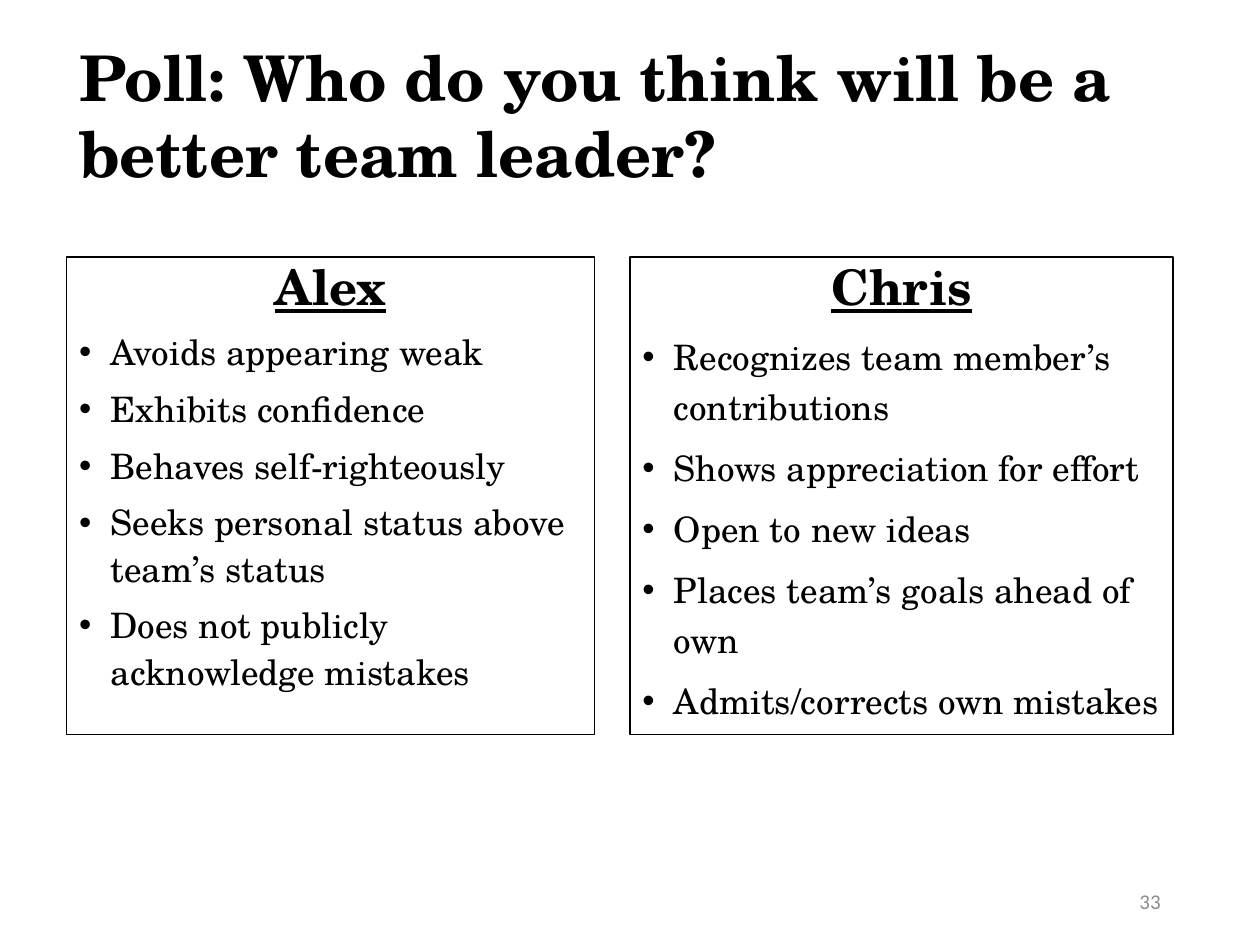
import pptx
import pptx.dml.color
import pptx.enum.shapes
import pptx.enum.text
import pptx.oxml.ns
import pptx.util
import lxml.etree

Inches = pptx.util.Inches
Pt = pptx.util.Pt
Align = pptx.enum.text.PP_ALIGN
Anchor = pptx.enum.text.MSO_ANCHOR


def color(value):
    return pptx.dml.color.RGBColor.from_string(value)


class PollSlide:
    serif = "TeX Gyre Schola"
    sans = "Calibri"
    ink = "000000"
    gray = "8C8C8C"

    def __init__(self, presentation):
        self.slide = presentation.slides.add_slide(presentation.slide_layouts[6])

    def add_run(self, paragraph, text, size, font=serif, ink=ink, bold=False, underline=False):
        run = paragraph.add_run()
        run.text = text
        run.font.name = font
        run.font.size = Pt(size)
        run.font.bold = bold
        run.font.underline = underline
        run.font.color.rgb = color(ink)

    def add_bullet(self, paragraph):
        properties = paragraph._p.get_or_add_pPr()
        properties.set("marL", str(Inches(0.25)))
        properties.set("indent", str(Inches(-0.25)))
        for tag, name, value in (("a:buFont", "typeface", "Arial"), ("a:buChar", "char", "•")):
            element = lxml.etree.SubElement(properties, pptx.oxml.ns.qn(tag))
            element.set(name, value)

    def add_text(self, text, left, top, width, height, size, align=Align.LEFT,
                 anchor=Anchor.TOP, **style):
        shape = self.slide.shapes.add_textbox(
            Inches(left), Inches(top), Inches(width), Inches(height))
        frame = shape.text_frame
        frame.word_wrap = True
        frame.vertical_anchor = anchor
        paragraph = frame.paragraphs[0]
        paragraph.alignment = align
        self.add_run(paragraph, text, size, **style)

    def add_candidate(self, name, traits, left, width, spacing):
        shape = self.slide.shapes.add_shape(
            pptx.enum.shapes.MSO_SHAPE.RECTANGLE,
            Inches(left), Inches(2.04), Inches(width), Inches(3.79))
        shape.shadow.inherit = False
        shape.fill.background()
        shape.line.color.rgb = color(self.ink)
        shape.line.width = Pt(0.75)
        frame = shape.text_frame
        frame.word_wrap = True
        frame.vertical_anchor = Anchor.TOP
        heading = frame.paragraphs[0]
        heading.alignment = Align.CENTER
        heading.line_spacing = 0.9
        self.add_run(heading, name, 28, bold=True, underline=True)
        for trait in traits:
            paragraph = frame.add_paragraph()
            paragraph.alignment = Align.LEFT
            paragraph.line_spacing = spacing
            paragraph.space_before = Pt(6)
            self.add_bullet(paragraph)
            self.add_run(paragraph, trait, 20)


def main():
    presentation = pptx.Presentation()
    presentation.slide_width = Inches(10)
    presentation.slide_height = Inches(7.5)
    poll = PollSlide(presentation)
    poll.add_candidate("Chris", [
        "Recognizes team member’s contributions",
        "Shows appreciation for effort",
        "Open to new ideas",
        "Places team’s goals ahead of own",
        "Admits/corrects own mistakes",
    ], left=5, width=4.31, spacing=1.2)
    poll.add_candidate("Alex", [
        "Avoids appearing weak",
        "Exhibits confidence",
        "Behaves self-righteously",
        "Seeks personal status above team’s status",
        "Does not publicly acknowledge mistakes",
    ], left=0.53, width=4.19, spacing=1.1)
    poll.add_text("33", 7.06, 6.95, 2.25, 0.4, 12, align=Align.RIGHT,
                  anchor=Anchor.MIDDLE, font=poll.sans, ink=poll.gray)
    poll.add_text("Poll: Who do you think will be a better team leader?",
                  0.53, 0.26, 8.5, 1.31, 36, bold=True)
    presentation.save("out.pptx")


if __name__ == "__main__":
    main()
